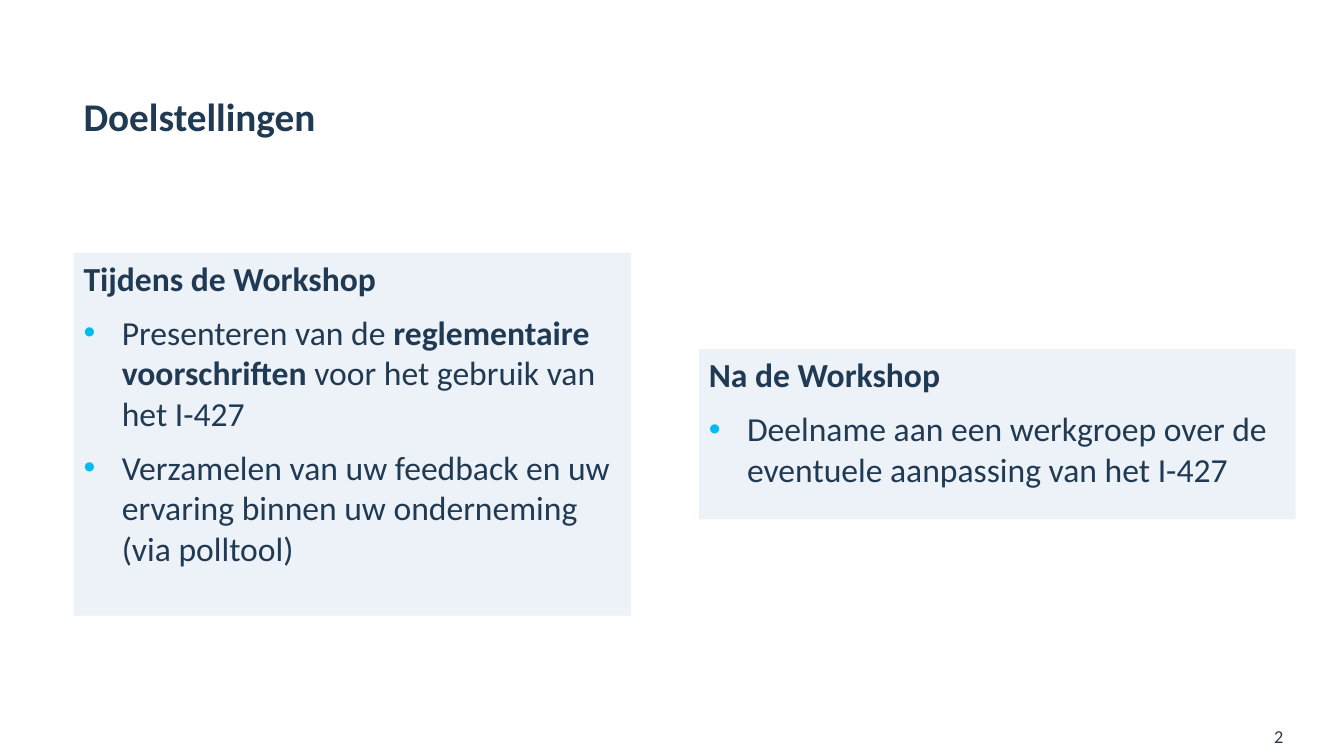
from dataclasses import dataclass

import pptx
import pptx.dml.color
import pptx.enum.shapes
import pptx.enum.text
import pptx.oxml
import pptx.oxml.ns
import pptx.util


@dataclass(frozen=True)
class Theme:
    font: str = "Calibri"
    ink: str = "213A53"
    panel: str = "ECF2F8"
    bullet: str = "02BCF0"
    title_size: int = 28
    body_size: int = 24
    number_size: int = 13


@dataclass(frozen=True)
class Area:
    """A place on the slide, in columns and rows of the grid."""
    column: float
    row: float
    columns: float
    rows: float


@dataclass(frozen=True)
class Panel:
    column: float
    columns: float
    rows: float
    heading: str
    goals: list[list[tuple[str, bool]]]  # each goal: (text, bold) pieces


THEME = Theme()
WIDTH, HEIGHT = pptx.util.Inches(13.33), pptx.util.Inches(7.5)
GRID = 100  # columns across, rows down
MARGIN = 5.48
PANEL_MIDDLE = 57.44  # row on which both panels are centred
INDENT = pptx.util.Inches(0.38)

PANELS = [
    Panel(MARGIN, 41.49, 48, "Tijdens de Workshop", [
        [("Presenteren van de ", False), ("reglementaire voorschriften", True),
         (" voor het gebruik van het I-427", False)],
        [("Verzamelen van uw feedback en uw ervaring binnen uw onderneming "
          "(via polltool)", False)],
    ]),
    Panel(52, 44.41, 22.53, "Na de Workshop", [
        [("Deelname aan een werkgroep over de eventuele aanpassing van het I-427",
          False)],
    ]),
]


def place(area: Area) -> tuple[int, int, int, int]:
    return (int(WIDTH * area.column / GRID), int(HEIGHT * area.row / GRID),
            int(WIDTH * area.columns / GRID), int(HEIGHT * area.rows / GRID))


def color(code: str) -> pptx.dml.color.RGBColor:
    return pptx.dml.color.RGBColor.from_string(code)


def add_bullet(paragraph) -> None:
    properties = paragraph._p.get_or_add_pPr()
    properties.set("marL", str(INDENT))
    properties.set("indent", str(-INDENT))
    namespace = pptx.oxml.ns.nsdecls("a")
    for xml in (
        f'<a:buClr {namespace}><a:srgbClr val="{THEME.bullet}"/></a:buClr>',
        f'<a:buFont {namespace} typeface="Arial"/>',
        f'<a:buChar {namespace} char="•"/>',
    ):
        properties.append(pptx.oxml.parse_xml(xml))


def write(frame, text: str | list[tuple[str, bool]], *, size: int = THEME.body_size,
          bold: bool = False, bulleted: bool = False, first: bool = False,
          line_spacing: float | None = None) -> None:
    """Write one paragraph, as plain text or as (text, bold) pieces."""
    paragraph = frame.paragraphs[0] if first else frame.add_paragraph()
    paragraph.alignment = pptx.enum.text.PP_ALIGN.LEFT
    paragraph.space_before = pptx.util.Pt(0 if first else 10)
    if line_spacing:
        paragraph.line_spacing = line_spacing
    if bulleted:
        add_bullet(paragraph)
    for piece, is_bold in [(text, bold)] if isinstance(text, str) else text:
        run = paragraph.add_run()
        run.text = piece
        run.font.name = THEME.font
        run.font.size = pptx.util.Pt(size)
        run.font.bold = is_bold
        run.font.color.rgb = color(THEME.ink)


def add_label(slide, area: Area, text: str, *, anchor=pptx.enum.text.MSO_ANCHOR.TOP,
              **text_format) -> None:
    frame = slide.shapes.add_textbox(*place(area)).text_frame
    frame.word_wrap = True
    frame.vertical_anchor = anchor
    write(frame, text, first=True, **text_format)


def add_panel(slide, panel: Panel) -> None:
    area = Area(panel.column, PANEL_MIDDLE - panel.rows / 2, panel.columns, panel.rows)
    box = slide.shapes.add_shape(pptx.enum.shapes.MSO_SHAPE.RECTANGLE, *place(area))
    box.shadow.inherit = False
    box.fill.solid()
    box.fill.fore_color.rgb = color(THEME.panel)
    box.line.fill.background()
    frame = box.text_frame
    frame.word_wrap = True
    frame.vertical_anchor = pptx.enum.text.MSO_ANCHOR.TOP
    write(frame, panel.heading, bold=True, first=True)
    for goal in panel.goals:
        write(frame, goal, bulleted=True)


def main() -> None:
    deck = pptx.Presentation()
    deck.slide_width, deck.slide_height = WIDTH, HEIGHT
    slide = deck.slides.add_slide(deck.slide_layouts[6])

    # Title
    add_label(slide, Area(MARGIN, 12.27, 89.12, 6.93), "Doelstellingen",
              size=THEME.title_size, bold=True, line_spacing=0.9)

    # Goals during and after the workshop
    for panel in PANELS:
        add_panel(slide, panel)

    # Slide number
    add_label(slide, Area(94.07, 94.67, 4.65, 5.33), "2", size=THEME.number_size,
              anchor=pptx.enum.text.MSO_ANCHOR.MIDDLE)

    deck.save("out.pptx")


if __name__ == "__main__":
    main()
